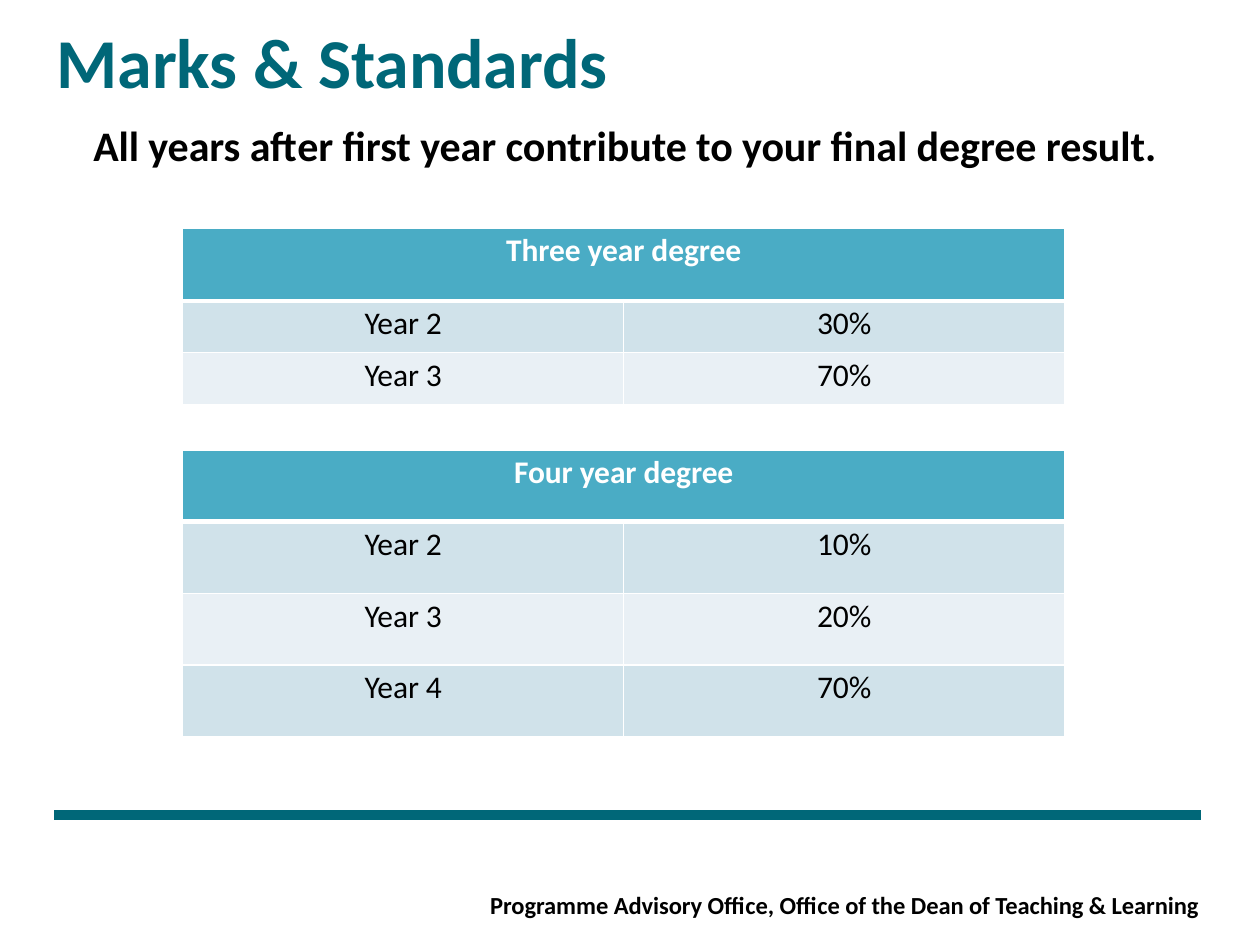
from lxml import etree
from pptx import Presentation
from pptx import util as u
from pptx.dml.color import RGBColor
from pptx.enum import shapes, text
from pptx.oxml.ns import qn

TEAL, BLACK, WHITE = "006778", "000000", "FFFFFF"
HEADER, BANDS = "4AACC5", ("D0E2EA", "E9F0F5")


def rgb(value):
    return RGBColor.from_string(value)


def write(frame, words, size=18, color=BLACK, bold=False, align=None,
          leading=None, tracking=-5):
    paragraph = frame.paragraphs[0]
    paragraph.alignment = align
    paragraph.line_spacing = leading
    run = paragraph.add_run()
    run.text = words
    run.font.name = "Calibri"
    run.font.size = u.Pt(size)
    run.font.bold = bold
    run.font.color.rgb = rgb(color)
    run._r.get_or_add_rPr().set("spc", str(tracking))


def set_borders(cell, **points):
    properties = cell._tc.get_or_add_tcPr()
    for side in "LRTB":
        line = etree.SubElement(properties, qn(f"a:ln{side}"),
                                w=str(u.Pt(points.get(side, 1))))
        fill = etree.SubElement(line, qn("a:solidFill"))
        etree.SubElement(fill, qn("a:srgbClr"), val=WHITE)


class DegreeSlide:
    def __init__(self, slide):
        self.slide = slide

    def label(self, words, left, top, width, height, inset=0.0, **style):
        box = self.slide.shapes.add_textbox(
            *map(u.Inches, (left, top, width, height)))
        frame = box.text_frame
        frame.word_wrap = False
        frame.margin_left = frame.margin_right = frame.margin_bottom = 0
        frame.margin_top = u.Inches(inset)
        write(frame, words, bold=True, **style)

    def rule(self, left, right, y, color, weight):
        line = self.slide.shapes.add_connector(
            shapes.MSO_CONNECTOR.STRAIGHT,
            *map(u.Inches, (left, y, right, y)))
        line.line.color.rgb = rgb(color)
        line.line.width = u.Pt(weight)
        etree.SubElement(line._element.spPr, qn("a:effectLst"))

    def cell(self, cell, words, fill, color=BLACK, bold=False, **borders):
        cell.margin_left = cell.margin_right = cell.margin_bottom = 0
        cell.margin_top = u.Inches(0.03)
        set_borders(cell, **borders)
        cell.fill.solid()
        cell.fill.fore_color.rgb = rgb(fill)
        if words:
            write(cell.text_frame, words, color=color, bold=bold,
                  align=text.PP_ALIGN.CENTER)

    def weights(self, heading, years, top, header_height, row_height):
        heights = [header_height] + [row_height] * len(years)
        table = self.slide.shapes.add_table(
            len(heights), 2, u.Inches(1.45), u.Inches(top),
            u.Inches(7), u.Inches(sum(heights))).table
        table.first_row = table.horz_banding = False
        for row, height in zip(table.rows, heights):
            row.height = u.Inches(height)
        for column, words in enumerate((heading, "")):
            self.cell(table.cell(0, column), words, HEADER,
                      color=WHITE, bold=True, B=3)
        table.cell(0, 0).merge(table.cell(0, 1))
        for index, year in enumerate(years):
            for column, words in enumerate(year):
                self.cell(table.cell(index + 1, column), words,
                          BANDS[index % 2], T=1 if index else 3)


def main():
    deck = Presentation()
    deck.slide_width, deck.slide_height = u.Inches(10), u.Inches(7.5)
    page = DegreeSlide(deck.slides.add_slide(deck.slide_layouts[6]))
    page.rule(0.43, 9.53, 6.47, TEAL, 5.64)
    page.label("Marks & Standards", 0.45, 0.13, 4.41, 0.69,
               inset=0.02, size=40, color=TEAL)
    page.label("Programme Advisory Office, Office of the Dean of "
               "Teaching & Learning", 3.89, 7.1, 5.68, 0.22,
               size=14, leading=u.Pt(14.3))
    page.label("All years after first year contribute to your final "
               "degree result.", 0.74, 0.93, 8.61, 0.42,
               inset=0.02, size=24)
    page.weights("Four year degree",
                 [("Year 2", "10%"), ("Year 3", "20%"), ("Year 4", "70%")],
                 3.57, 0.57, 0.57)
    page.weights("Three year degree",
                 [("Year 2", "30%"), ("Year 3", "70%")],
                 1.81, 0.58, 0.41)
    deck.save("out.pptx")


if __name__ == "__main__":
    main()
